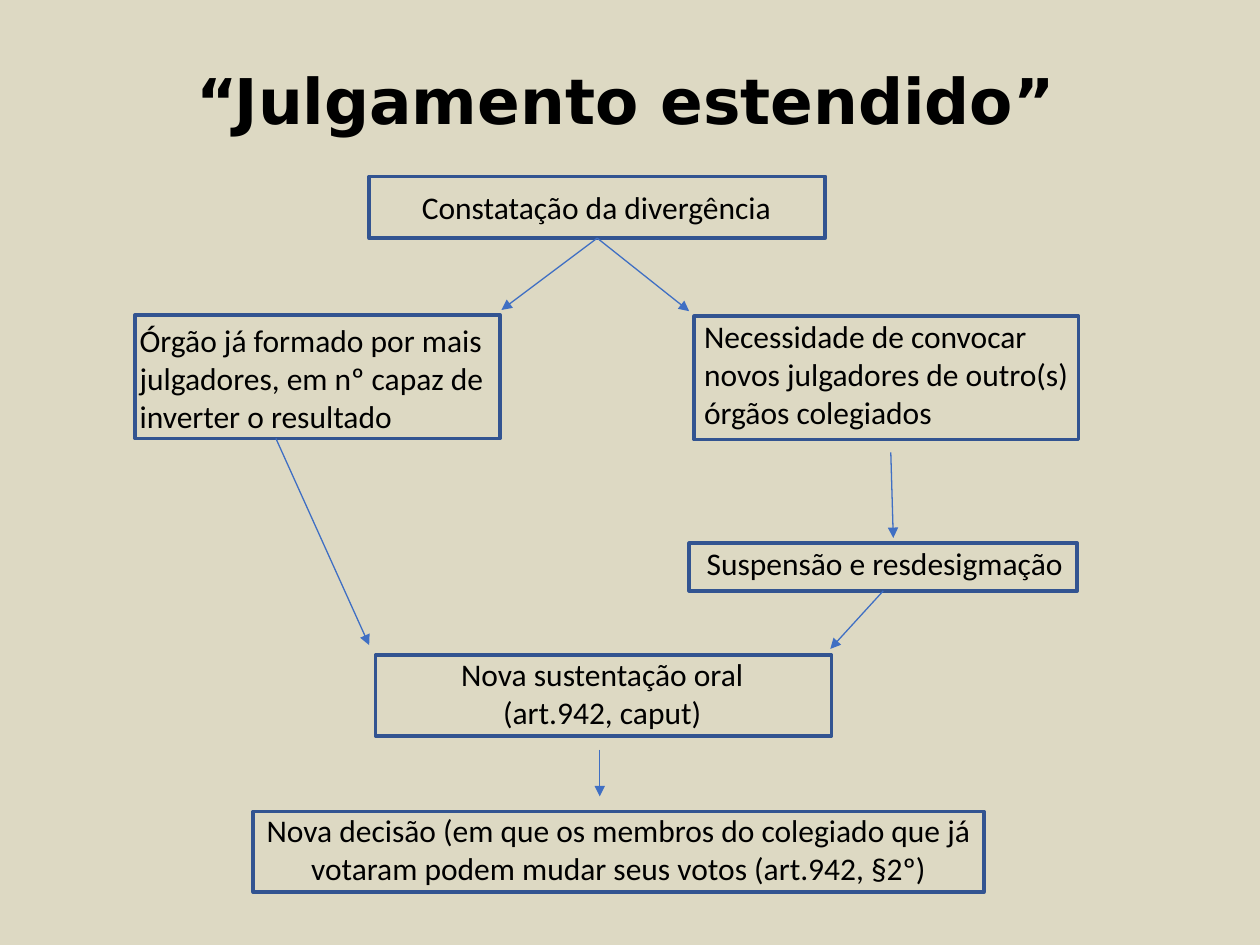
from dataclasses import dataclass
from typing import Optional

from lxml import etree
from pptx import Presentation
from pptx.dml.color import RGBColor
from pptx.enum.shapes import MSO_CONNECTOR, MSO_SHAPE
from pptx.enum.text import MSO_AUTO_SIZE, PP_ALIGN
from pptx.oxml.ns import qn
from pptx.util import Inches, Pt

STRAIGHT = MSO_CONNECTOR.STRAIGHT
RECTANGLE = MSO_SHAPE.RECTANGLE
FIT_TEXT = MSO_AUTO_SIZE.SHAPE_TO_FIT_TEXT
LEFT, CENTER = PP_ALIGN.LEFT, PP_ALIGN.CENTER
BOTTOM_SIDE = 2

BACKGROUND = RGBColor(0xDD, 0xD9, 0xC3)
BORDER = RGBColor(0x32, 0x54, 0x91)
ARROW = RGBColor(0x3F, 0x6F, 0xC3)
BLACK = RGBColor(0, 0, 0)

Frame = tuple[float, float, float, float]
Point = tuple[float, float]


@dataclass
class Step:
    name: str
    text: str
    box: Frame
    label: Frame
    align: PP_ALIGN = LEFT
    wrap: bool = True


@dataclass
class Arrow:
    start: Point
    end: Point
    source: Optional[str] = None


STEPS = [
    Step("divergence", "Constatação da divergência",
         (2.93, 1.4, 3.62, 0.49), (3.25, 1.44, 3, 0.71), wrap=False),
    Step("formed panel", "Órgão já formado por mais julgadores, em nº capaz de inverter o resultado",
         (1.07, 2.5, 2.9, 0.98), (1.01, 2.5, 2.96, 1.01)),
    Step("summoning", "Necessidade de convocar novos julgadores de outro(s) órgãos colegiados",
         (5.51, 2.51, 3.05, 0.98), (5.49, 2.47, 3.16, 1.31)),
    Step("suspension", "Suspensão e resdesigmação",
         (5.47, 4.31, 3.08, 0.38), (5.51, 4.27, 3.16, 0.4)),
    Step("oral argument", "Nova sustentação oral\n(art.942, caput)",
         (2.98, 5.2, 3.62, 0.64), (3.2, 5.15, 3.16, 1.01), CENTER),
    Step("decision", "Nova decisão (em que os membros do colegiado que já votaram "
         "podem mudar seus votos (art.942, §2º)",
         (2.01, 6.44, 5.8, 0.64), (2.01, 6.39, 5.8, 1.01), CENTER),
]

ARROWS = [
    Arrow((4.76, 1.91), (3.98, 2.46), "divergence"),
    Arrow((4.76, 1.88), (5.47, 2.47), "divergence"),
    Arrow((7.01, 4.69), (6.59, 5.15), "suspension"),
    Arrow((2.19, 3.48), (2.93, 5.12)),
    Arrow((7.07, 3.59), (7.09, 4.27)),
    Arrow((4.76, 5.95), (4.76, 6.32)),
]


def add_text(slide, text: str, frame: Frame, *, size: float = 18, font: str = "Calibri",
             bold: bool = False, align: PP_ALIGN = LEFT, wrap: bool = True) -> None:
    text_frame = slide.shapes.add_textbox(*map(Inches, frame)).text_frame
    text_frame.word_wrap = wrap
    text_frame.auto_size = FIT_TEXT
    text_frame.text = text
    for paragraph in text_frame.paragraphs:
        paragraph.alignment = align
        for run in paragraph.runs:
            run.font.size = Pt(size)
            run.font.name = font
            run.font.bold = bold
            run.font.color.rgb = BLACK


def add_box(slide, frame: Frame):
    box = slide.shapes.add_shape(RECTANGLE, *map(Inches, frame))
    box.shadow.inherit = False
    box.fill.background()
    box.line.color.rgb = BORDER
    box.line.width = Pt(2)
    return box


def add_arrow(slide, arrow: Arrow, boxes: dict) -> None:
    connector = slide.shapes.add_connector(STRAIGHT, *map(Inches, arrow.start + arrow.end))
    if arrow.source:
        connector.begin_connect(boxes[arrow.source], BOTTOM_SIDE)
    connector.line.color.rgb = ARROW
    connector.line.width = Pt(0.75)
    properties = connector.element.spPr
    etree.SubElement(properties.find(qn("a:ln")), qn("a:tailEnd"), type="triangle")
    etree.SubElement(properties, qn("a:effectLst"))


def main() -> None:
    presentation = Presentation()
    presentation.slide_width = Inches(10)
    presentation.slide_height = Inches(7.5)
    slide = presentation.slides.add_slide(presentation.slide_layouts[6])
    slide.background.fill.solid()
    slide.background.fill.fore_color.rgb = BACKGROUND

    add_text(slide, "“Julgamento estendido”", (0.35, 0.44, 9.23, 0.71),
             size=36, font="DejaVu Sans", bold=True, align=CENTER)
    boxes = {step.name: add_box(slide, step.box) for step in STEPS}
    for arrow in ARROWS:
        add_arrow(slide, arrow, boxes)
    for step in STEPS:
        add_text(slide, step.text, step.label, align=step.align, wrap=step.wrap)

    presentation.save("out.pptx")


if __name__ == "__main__":
    main()
